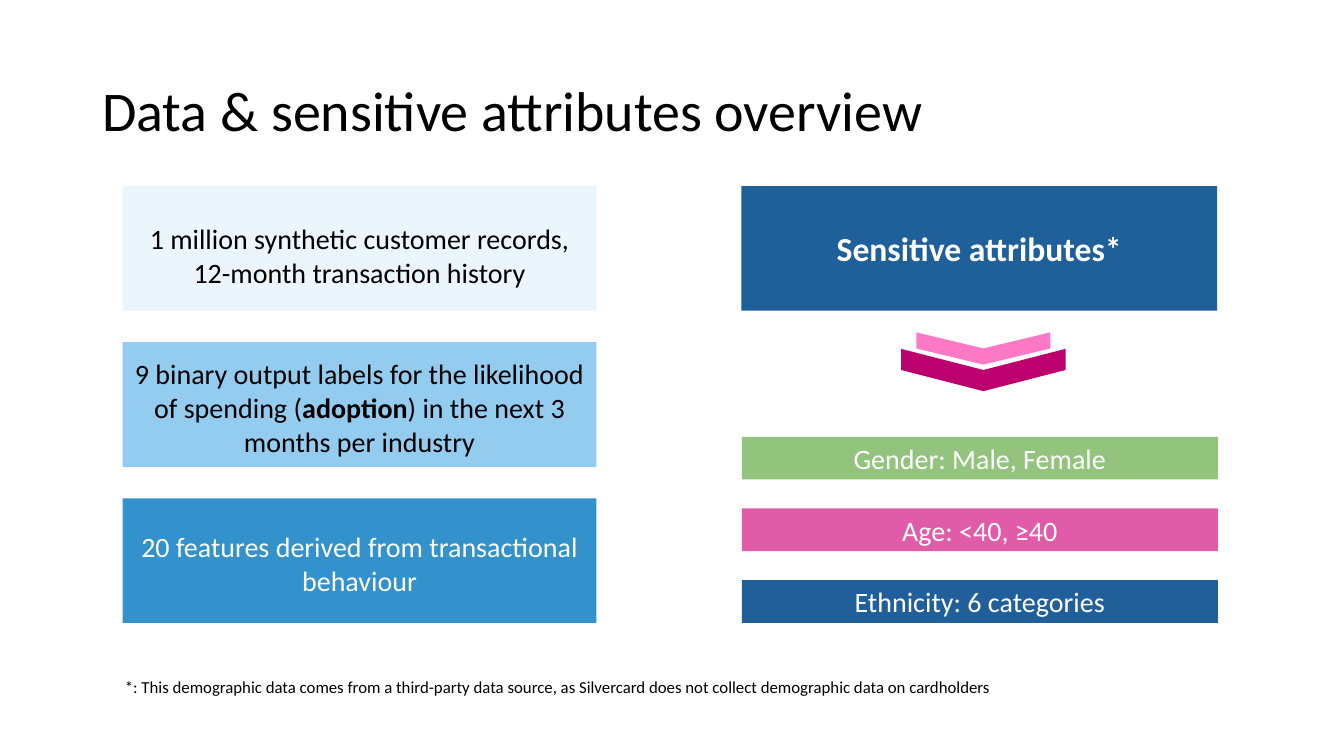
"""Build the slide on data and sensitive attributes."""
from dataclasses import dataclass

from pptx import Presentation
from pptx.dml.color import RGBColor
from pptx.enum.shapes import MSO_SHAPE
from pptx.enum.text import MSO_ANCHOR, PP_ALIGN
from pptx.shapes.autoshape import Shape
from pptx.slide import Slide
from pptx.util import Pt

FONT = "Calibri"
BLACK, WHITE = "000000", "FFFFFF"


@dataclass
class Card:
    runs: list[str]
    fill: str
    left: float
    top: float
    width: float
    height: float
    ink: str = WHITE
    size: float = 20
    bold: bool = False
    drop: float = 0


@dataclass
class Arrow:
    fill: str
    top: float
    span: float
    depth: float


def paint(hue: str) -> RGBColor:
    return RGBColor.from_string(hue)


def write(shape: Shape, runs: list[str], *, size: float, ink: str = BLACK,
          bold: bool = False, align: PP_ALIGN = PP_ALIGN.LEFT,
          anchor: MSO_ANCHOR = MSO_ANCHOR.MIDDLE, lead: float = 1,
          drop: float = 0) -> None:
    """Write runs in one paragraph; every second run flips the weight."""
    frame = shape.text_frame
    frame.word_wrap = True
    frame.vertical_anchor = anchor
    frame.margin_top = Pt(3.6 + 2 * drop)
    para = frame.paragraphs[0]
    para.alignment = align
    para.line_spacing = lead
    for index, text in enumerate(runs):
        run = para.add_run()
        run.text = text
        run.font.name = FONT
        run.font.size = Pt(size)
        run.font.bold = bold != (index % 2 == 1)
        run.font.color.rgb = paint(ink)


def block(slide: Slide, kind: MSO_SHAPE, fill: str, left: float, top: float,
          width: float, height: float) -> Shape:
    shape = slide.shapes.add_shape(kind, Pt(left), Pt(top), Pt(width), Pt(height))
    shape.shadow.inherit = False
    shape.fill.solid()
    shape.fill.fore_color.rgb = paint(fill)
    shape.line.fill.background()
    return shape


def draw_card(slide: Slide, card: Card) -> None:
    shape = block(slide, MSO_SHAPE.RECTANGLE, card.fill, card.left, card.top,
                  card.width, card.height)
    write(shape, card.runs, size=card.size, ink=card.ink, bold=card.bold,
          align=PP_ALIGN.CENTER, drop=card.drop)


def draw_arrow(slide: Slide, arrow: Arrow, mid: float) -> None:
    """Draw a chevron that points down, centred on mid."""
    left = mid - arrow.depth / 2
    top = arrow.top + (arrow.depth - arrow.span) / 2
    shape = block(slide, MSO_SHAPE.CHEVRON, arrow.fill, left, top,
                  arrow.depth, arrow.span)
    shape.rotation = 90


def add_text(slide: Slide, left: float, top: float, width: float,
             height: float) -> Shape:
    return slide.shapes.add_textbox(Pt(left), Pt(top), Pt(width), Pt(height))


def main() -> None:
    deck = Presentation()
    deck.slide_width, deck.slide_height = Pt(960), Pt(540)
    slide = deck.slides.add_slide(deck.slide_layouts[6])

    title = add_text(slide, 66, 28.8, 828, 104.4)
    write(title, ["Data & sensitive attributes overview"], size=40, lead=0.9)

    facts = [
        (["1 million synthetic customer records, 12-month transaction history"],
         "EBF5FC", BLACK, 5),
        (["9 binary output labels for the likelihood of spending (", "adoption",
          ") in the next 3 months per industry"], "93CCEF", BLACK, 2),
        (["20 features derived from transactional behaviour"],
         "3392CC", WHITE, 2),
    ]
    for row, (runs, fill, ink, drop) in enumerate(facts):
        draw_card(slide, Card(runs, fill, 87.7, 133 + 111.5 * row, 338.3, 89,
                              ink=ink, drop=drop))

    draw_card(slide, Card(["Sensitive attributes*"], "1F5F9A", 529.5, 133, 340, 89,
                          size=24, bold=True))

    groups = [
        ("Gender: Male, Female", "93C47D"),
        ("Age: <40, ≥40", "E05CA9"),
        ("Ethnicity: 6 categories", "215F9B"),
    ]
    for row, (text, fill) in enumerate(groups):
        draw_card(slide, Card([text], fill, 529.9, 312 + 51.2 * row, 340, 30.5))

    for arrow in (Arrow("BC006D", 249.2, 117.4, 30.2),
                  Arrow("FF78C6", 237.4, 95.8, 23)):
        draw_arrow(slide, arrow, 702.4)

    note = add_text(slide, 82.1, 474.5, 860, 36)
    write(note, ["*: This demographic data comes from a third-party data source, "
                 "as Silvercard does not collect demographic data on cardholders"],
          size=12, anchor=MSO_ANCHOR.TOP, drop=2.7)

    deck.save("out.pptx")


if __name__ == "__main__":
    main()
